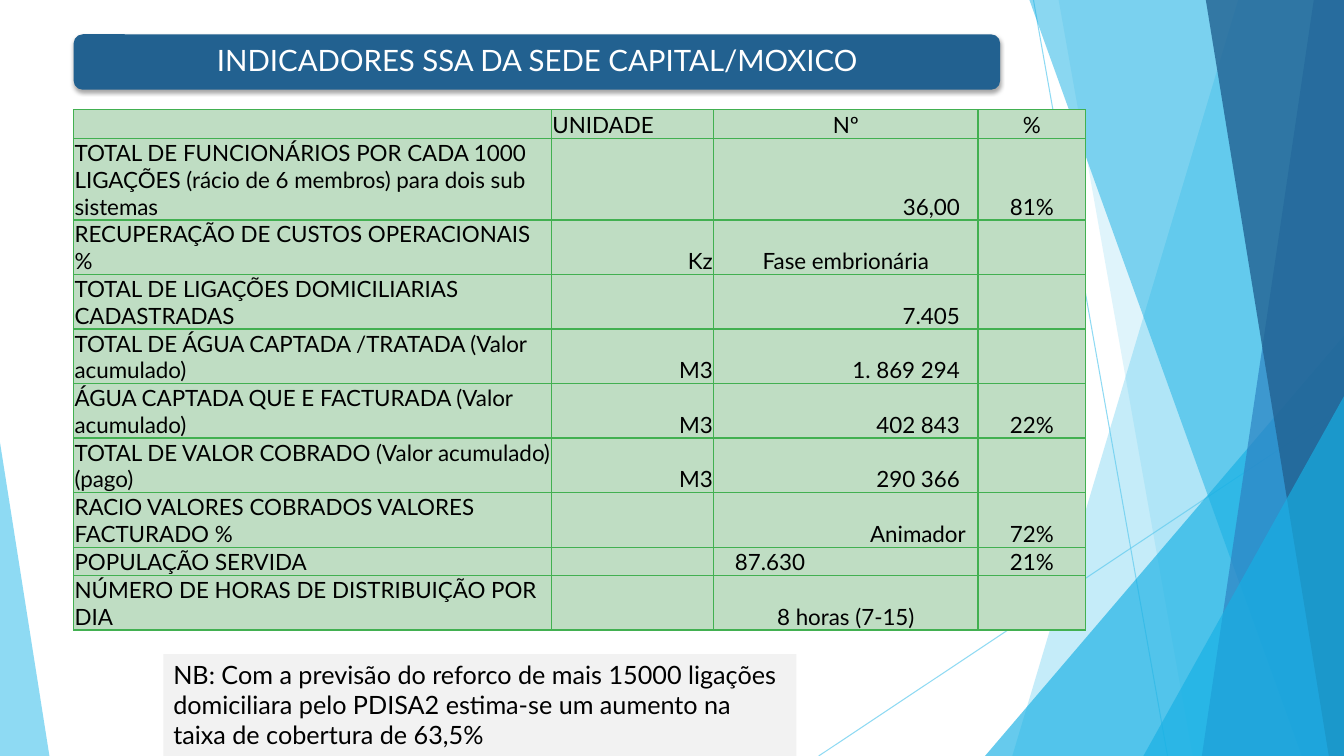
"""Build the slide of SSA indicators for the Moxico capital."""
import lxml.etree
import pptx
import pptx.dml.color
import pptx.enum.shapes
import pptx.enum.text
import pptx.oxml.ns
import pptx.util

qn = pptx.oxml.ns.qn
SubElement = lxml.etree.SubElement
Shapes = pptx.enum.shapes.MSO_SHAPE
Align = pptx.enum.text.PP_ALIGN
Anchor = pptx.enum.text.MSO_ANCHOR


def paint(fill, color, opacity=100):
    """Fill with a hex colour at an opacity in percent."""
    fill.solid()
    fill.fore_color.rgb = pptx.dml.color.RGBColor.from_string(color)
    if opacity < 100:
        SubElement(fill._xPr.find(".//" + qn("a:srgbClr")), qn("a:alpha"), val=str(opacity * 1000))


def write(paragraph, text, size, color, align):
    """Add one Lato run to an aligned paragraph."""
    paragraph.alignment = align
    run = paragraph.add_run()
    run.text = text
    run.font.name = "Lato"
    run.font.size = pptx.util.Pt(size)
    paint(run.font.fill, color)


presentation = pptx.Presentation()
presentation.slide_width = pptx.util.Inches(13.33)
presentation.slide_height = pptx.util.Inches(7.5)
slide = presentation.slides.add_slide(presentation.slide_layouts[6])
shapes = slide.shapes
right, bottom = 1333, 750
unit = presentation.slide_width // right

for ends in [(1025, 0, 1158, bottom), (right, 403, 812, bottom)]:
    line = shapes.add_connector(pptx.enum.shapes.MSO_CONNECTOR.STRAIGHT, *[end * unit for end in ends])
    line.line.width = pptx.util.Pt(0.75)
    paint(line.line.fill, "5FCBEF", 70)
    SubElement(line._element.spPr, qn("a:effectLst"))

facets = [
    ("wedge", 1228, 1004, "5FCBEF", 36),
    ("wedge", 1050, 1183, "5FCBEF", 20),
    ("triangle", 977, 333, 356, 1, "17B0E4", 66),
    ("wedge", 1021, 1291, "17B0E4", 50),
    ("wedge", 1303, 1192, "2E83C3", 70),
    ("wedge", 1196, 1318, "226292", 80),
    ("triangle", 1134, 393, 199, 1, "17B0E4", 66),
    ("triangle", 0, 439, 49, 0, "5FCBEF", 70),
]
for kind, *places, color, opacity in facets:
    if kind == "wedge":
        top_x, bottom_x = places
        builder = shapes.build_freeform(top_x, 0, scale=float(unit))
        builder.add_line_segments([(right, 0), (right, bottom), (bottom_x, bottom)], close=True)
        facet = builder.convert_to_shape()
    else:
        left, top, width, apex = places
        facet = shapes.add_shape(Shapes.ISOSCELES_TRIANGLE, left * unit, top * unit,
                                 width * unit, (bottom - top) * unit)
        facet.adjustments[0] = apex
    paint(facet.fill, color, opacity)
    facet.line.fill.background()
    facet.shadow.inherit = False

value_layouts = {
    "center": (Align.CENTER, 1, 1),
    "number": (Align.RIGHT, 1, 18),
    "word": (Align.RIGHT, 1, 12),
    "start": (Align.LEFT, 21, 1),
}
indicators = [
    (1, "", "UNIDADE", "Nº", "center", "%"),
    (3, "TOTAL DE FUNCIONÁRIOS POR CADA 1000 LIGAÇÕES (rácio de 6 membros) para dois sub sistemas",
     "", "36,00", "number", "81%"),
    (2, "RECUPERAÇÃO DE CUSTOS OPERACIONAIS %", "Kz", "Fase embrionária", "center", ""),
    (2, "TOTAL DE LIGAÇÕES DOMICILIARIAS CADASTRADAS", "", "7.405", "number", ""),
    (2, "TOTAL DE ÁGUA CAPTADA /TRATADA (Valor acumulado)", "M3", "1. 869 294", "number", ""),
    (2, "ÁGUA CAPTADA QUE E FACTURADA (Valor acumulado)", "M3", "402 843", "number", "22%"),
    (2, "TOTAL DE VALOR COBRADO (Valor acumulado) (pago)", "M3", "290 366", "number", ""),
    (2, "RACIO VALORES COBRADOS VALORES FACTURADO %", "", "Animador", "word", "72%"),
    (1, "POPULAÇÃO SERVIDA", "", "87.630", "start", "21%"),
    (2, "NÚMERO DE HORAS DE DISTRIBUIÇÃO POR DIA", "", "8 horas (7-15)", "center", ""),
]
column_widths = [474, 161, 262, 107]
line_height = 27
table_height = line_height * sum(row[0] for row in indicators)
table = shapes.add_table(len(indicators), len(column_widths), 73 * unit, 109 * unit,
                         sum(column_widths) * unit, table_height * unit).table
table.first_row = False
table.horz_banding = False
for column, width in zip(table.columns, column_widths):
    column.width = width * unit

for row_index, (lines, label, measure, value, value_layout, share) in enumerate(indicators):
    table.rows[row_index].height = lines * line_height * unit
    layouts = [
        (Align.LEFT, 1, 1),
        (Align.RIGHT if row_index else Align.LEFT, 1, 1),
        value_layouts[value_layout],
        (Align.CENTER, 1, 1),
    ]
    for column_index, text in enumerate([label, measure, value, share]):
        cell = table.cell(row_index, column_index)
        align, margin_left, margin_right = layouts[column_index]
        cell.margin_left, cell.margin_right = margin_left * unit, margin_right * unit
        cell.margin_top, cell.margin_bottom = unit, 0
        cell.vertical_anchor = Anchor.BOTTOM
        paint(cell.fill, "BFDDC3")
        properties = cell._tc.tcPr
        for position, side in enumerate(["lnL", "lnR", "lnT", "lnB"]):
            border = lxml.etree.Element(qn("a:" + side), w=str(pptx.util.Pt(1)))
            SubElement(SubElement(border, qn("a:solidFill")), qn("a:srgbClr"), val="42B051")
            properties.insert(position, border)
        paragraph = cell.text_frame.paragraphs[0]
        if text:
            write(paragraph, text, 16, "000000", align)
        else:
            SubElement(paragraph._p, qn("a:endParaRPr"), sz="1600")

banner = shapes.add_shape(Shapes.ROUNDED_RECTANGLE, 73 * unit, 34 * unit, 919 * unit, 55 * unit)
paint(banner.fill, "226190")
banner.line.fill.background()
banner.shadow.inherit = False
shadow = SubElement(banner._element.spPr.find(qn("a:effectLst")), qn("a:outerShdw"),
                    blurRad=str(pptx.util.Pt(3)), dist=str(pptx.util.Pt(2)), dir="5400000", rotWithShape="0")
SubElement(SubElement(shadow, qn("a:srgbClr"), val="000000"), qn("a:alpha"), val="35000")

title = shapes.add_textbox(76 * unit, 37 * unit, 914 * unit, 50 * unit)
title.text_frame.word_wrap = True
title.text_frame.vertical_anchor = Anchor.MIDDLE
title.text_frame.margin_top = title.text_frame.margin_bottom = 9 * unit
title_paragraph = title.text_frame.paragraphs[0]
title_paragraph.line_spacing = 0.9
write(title_paragraph, "INDICADORES SSA DA SEDE CAPITAL/MOXICO", 21, "FFFFFF", Align.CENTER)

note = shapes.add_shape(Shapes.RECTANGLE, 162 * unit, 649 * unit, 628 * unit, 101 * unit)
paint(note.fill, "F2F2F2")
note.line.fill.background()
note.shadow.inherit = False
note.text_frame.word_wrap = True
note.text_frame.auto_size = pptx.enum.text.MSO_AUTO_SIZE.SHAPE_TO_FIT_TEXT
note.text_frame.vertical_anchor = Anchor.TOP
write(note.text_frame.paragraphs[0],
      "NB: Com a previsão do reforco de mais 15000 ligações domiciliara pelo PDISA2 "
      "estima-se um aumento na taixa de cobertura de 63,5%", 18, "000000", Align.LEFT)

presentation.save("out.pptx")
